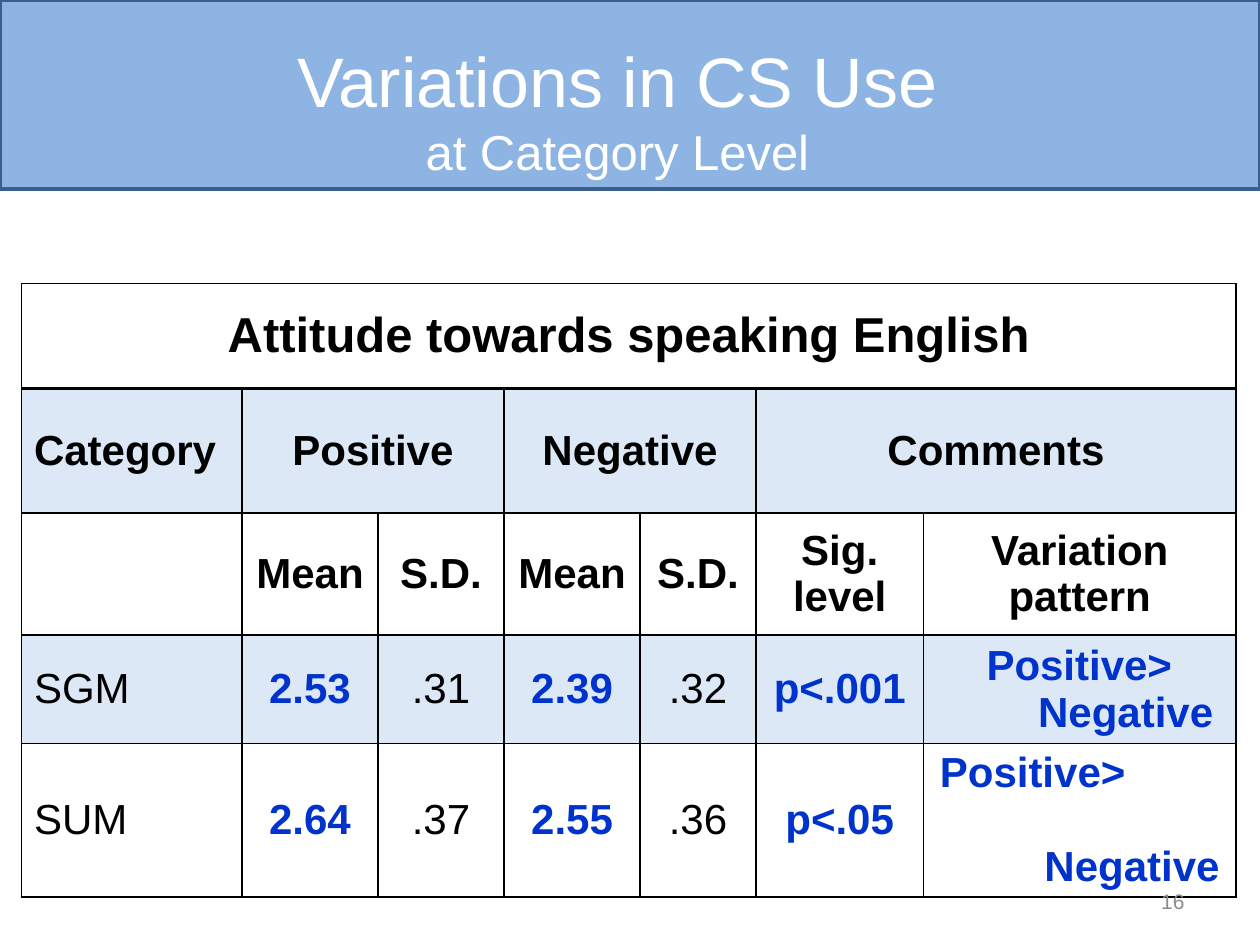
"""Build a slide with a table of strategy use by attitude towards speaking English."""
from dataclasses import dataclass

from lxml import etree
from pptx import Presentation
from pptx.dml.color import RGBColor
from pptx.enum.text import MSO_ANCHOR, MSO_AUTO_SIZE, PP_ALIGN
from pptx.oxml.ns import qn
from pptx.util import Inches, Pt

LEFT, CENTER, RIGHT = PP_ALIGN.LEFT, PP_ALIGN.CENTER, PP_ALIGN.RIGHT
MIDDLE, BOTTOM = MSO_ANCHOR.MIDDLE, MSO_ANCHOR.BOTTOM
TITLE_ONLY = 5


@dataclass(frozen=True)
class Theme:
    font: str = "Arial"
    banner: str = "8EB4E3"
    banner_line: str = "3A5F8C"
    white: str = "FFFFFF"
    black: str = "000000"
    accent: str = "0033CC"
    band: str = "DDE8F7"
    muted: str = "8C8C8C"
    title_size: int = 40
    heading_size: int = 28
    table_size: int = 24
    number_size: int = 12


theme = Theme()


def add_text(paragraph, text, size, color, bold=False):
    run = paragraph.add_run()
    run.text = text
    run.font.name = theme.font
    run.font.size = Pt(size)
    run.font.bold = bold
    run.font.color.rgb = RGBColor.from_string(color)


def add_borders(cell, bottom_width):
    properties = cell._tc.get_or_add_tcPr()
    for side, width in (("L", 1), ("R", 1), ("T", 1), ("B", bottom_width)):
        line = etree.SubElement(properties, qn(f"a:ln{side}"), w=str(Pt(width)))
        fill = etree.SubElement(line, qn("a:solidFill"))
        etree.SubElement(fill, qn("a:srgbClr"), val=theme.black)


presentation = Presentation()
presentation.slide_width, presentation.slide_height = Inches(10), Inches(7.5)
slide = presentation.slides.add_slide(presentation.slide_layouts[TITLE_ONLY])

title = slide.shapes.title
title.left, title.top = Inches(0), Inches(0)
title.width, title.height = Inches(10), Inches(1.5)
title.fill.solid()
title.fill.fore_color.rgb = RGBColor.from_string(theme.banner)
title.line.color.rgb = RGBColor.from_string(theme.banner_line)
title.line.width = Pt(2)
title_frame = title.text_frame
title_frame.auto_size = MSO_AUTO_SIZE.NONE
title_frame.vertical_anchor = BOTTOM
title_frame.margin_left, title_frame.margin_right = Inches(0), Inches(0.2)
title_frame.margin_bottom = Inches(0.07)
paragraph = title_frame.paragraphs[0]
paragraph.alignment = CENTER
add_text(paragraph, "Variations in CS Use", theme.title_size, theme.white)
paragraph.add_line_break()
add_text(paragraph, "at Category Level", theme.heading_size, theme.white)

column_widths = [1.75, 1.08, 1, 1.08, 0.92, 1.33, 2.48]
row_heights = [0.83, 0.99, 0.97, 0.86, 1.22]
rows = [
    ["Attitude towards speaking English", "", "", "", "", "", ""],
    ["Category", "Positive", "", "Negative", "", "Comments", ""],
    ["", "Mean", "S.D.", "Mean", "S.D.", "Sig. level", "Variation pattern"],
    ["SGM", "2.53", ".31", "2.39", ".32", "p<.001", "Positive>\nNegative"],
    ["SUM", "2.64", ".37", "2.55", ".36", "p<.05", "Positive>\nNegative"],
]
pattern_layout = {3: ((0.4, 0.81), 0), 4: ((0.03, 0.86), 27)}
plain_columns = (0, 2, 4)
banded_rows = (1, 3)

table = slide.shapes.add_table(
    len(rows), len(column_widths), Inches(0.17), Inches(2.25),
    Inches(sum(column_widths)), Inches(sum(row_heights))).table
table.first_row = False
table.horz_banding = False
for column, width in zip(table.columns, column_widths):
    column.width = Inches(width)
for row, height in zip(table.rows, row_heights):
    row.height = Inches(height)

for row_index, texts in enumerate(rows):
    is_data = row_index >= 3
    size = theme.heading_size if row_index == 0 else theme.table_size
    for column_index, text in enumerate(texts):
        cell = table.cell(row_index, column_index)
        add_borders(cell, 2 if row_index == 0 else 1)
        if row_index in banded_rows:
            cell.fill.solid()
            cell.fill.fore_color.rgb = RGBColor.from_string(theme.band)
        else:
            cell.fill.background()
        cell.vertical_anchor = MIDDLE
        if not text:
            continue
        is_plain = is_data and column_index in plain_columns
        color = theme.accent if is_data and not is_plain else theme.black
        is_pattern = is_data and column_index == 6
        is_left = is_pattern or (column_index == 0 and row_index > 0)
        for line_index, line_text in enumerate(text.split("\n")):
            frame = cell.text_frame
            paragraph = frame.add_paragraph() if line_index else frame.paragraphs[0]
            paragraph.alignment = LEFT if is_left else CENTER
            if is_pattern:
                indents, gap = pattern_layout[row_index]
                paragraph._p.get_or_add_pPr().set("marL", str(Inches(indents[line_index])))
                paragraph.space_before = Pt(gap * line_index)
            add_text(paragraph, line_text, size, color, not is_plain)

merges = [(0, 0, 6), (1, 1, 2), (1, 3, 4), (1, 5, 6)]
for row_index, first, last in merges:
    table.cell(row_index, first).merge(table.cell(row_index, last))

slide_number = slide.shapes.add_textbox(Inches(7.17), Inches(6.95), Inches(2.33), Inches(0.4))
slide_number.text_frame.word_wrap = True
slide_number.text_frame.vertical_anchor = MIDDLE
paragraph = slide_number.text_frame.paragraphs[0]
paragraph.alignment = RIGHT
add_text(paragraph, "16", theme.number_size, theme.muted)

presentation.save("out.pptx")
